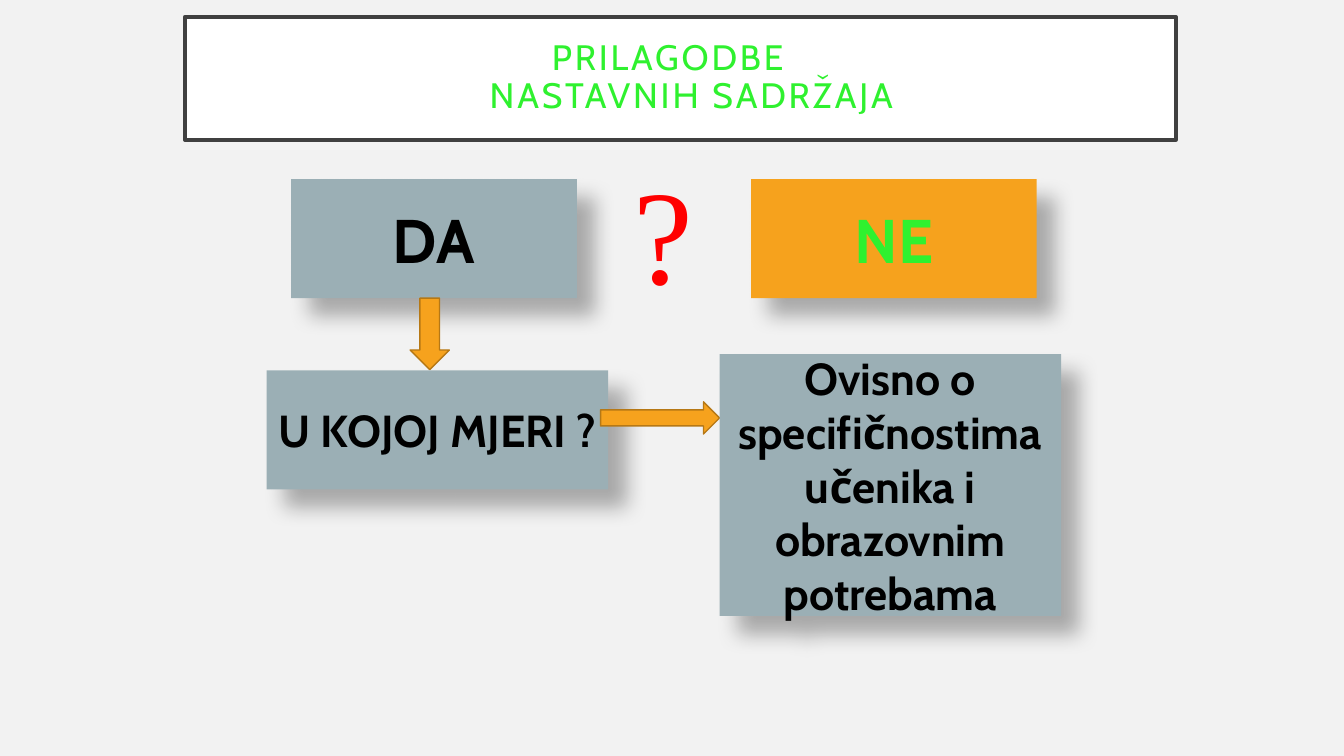
from lxml.etree import SubElement as Sub
from pptx import Presentation
from pptx.dml.color import RGBColor
from pptx.enum.shapes import MSO_SHAPE as Kind
from pptx.enum.text import MSO_ANCHOR as Anchor, MSO_AUTO_SIZE as Fit, PP_ALIGN as Align
from pptx.oxml.ns import qn
from pptx.util import Pt

GREY, GOLD, GREEN, BLACK = "9BAFB5", "F6A21D", "2FF12F", "000000"


def paint(fill, hue):
    fill.solid()
    fill.fore_color.rgb = RGBColor.from_string(hue)


def apply(item, form):
    """Set each attribute of item from the dict form."""
    for name, value in form.items():
        setattr(item, name, value)


class Board:
    font = "Cabin"
    frame = dict(word_wrap=True, auto_size=Fit.NONE, vertical_anchor=Anchor.MIDDLE)

    def __init__(self, deck):
        self.slide = deck.slides.add_slide(deck.slide_layouts[5])
        paint(self.slide.background.fill, "F2F2F2")

    def fill_in(self, shape, text, size, hue, align=Align.CENTER, **form):
        """Put styled text in the shape and return its paragraph."""
        apply(shape.text_frame, self.frame)
        par = shape.text_frame.paragraphs[0]
        par.text, par.alignment = text, align
        for run in par.runs:
            apply(run.font, dict(name=self.font, size=Pt(size)) | form)
            paint(run.font.fill, hue)
        return par

    def edge(self, shape, hue, width):
        paint(shape.line.fill, hue)
        shape.line.width = Pt(width)

    def title(self, text, spot):
        shape = self.slide.shapes.title
        apply(shape, dict(zip(("left", "top", "width", "height"), map(Pt, spot))))
        paint(shape.fill, "FFFFFF")
        self.edge(shape, "404040", 2.5)
        par = self.fill_in(shape, text, 25.2, GREEN)
        par.line_spacing = 0.9
        sides = dict.fromkeys(("margin_left", "margin_top", "margin_bottom"), Pt(14.4))
        apply(shape.text_frame, sides | dict(margin_right=Pt(30.4)))
        # The hanging indent sets the second line to the right of the first.
        props = par._p.get_or_add_pPr()
        props.set("marL", str(Pt(32)))
        props.set("indent", str(-Pt(32)))
        for run in par.runs:
            run._r.get_or_add_rPr().set("spc", "200")

    def shape(self, kind, spot, hue):
        shape = self.slide.shapes.add_shape(kind, *map(Pt, spot))
        shape.shadow.inherit = False
        paint(shape.fill, hue)
        return shape

    def box(self, text, spot, size, fill=GREY, hue=BLACK):
        shape = self.shape(Kind.RECTANGLE, spot, fill)
        shape.line.fill.background()
        self.shade(shape)
        self.fill_in(shape, text, size, hue, bold=True)

    def shade(self, shape):
        """Cast a soft shadow down and to the right."""
        fx = shape._element.spPr.find(qn("a:effectLst"))
        cast = Sub(fx, qn("a:outerShdw"), blurRad=str(Pt(15)), dist=str(Pt(18)),
                   dir="2700000", algn="tl", rotWithShape="0")
        tint = Sub(cast, qn("a:srgbClr"), val=BLACK)
        Sub(tint, qn("a:alpha"), val="30000")

    def arrow(self, kind, spot):
        self.edge(self.shape(kind, spot, GOLD), "B67815", 1)

    def label(self, text, spot, size, hue, font):
        shape = self.slide.shapes.add_textbox(*map(Pt, spot))
        self.fill_in(shape, text, size, hue, Align.LEFT, name=font)


def main():
    deck = Presentation()
    apply(deck, dict(slide_width=Pt(960), slide_height=Pt(540)))
    board = Board(deck)
    board.title("PRILAGODBE\vNASTAVNIH SADRŽAJA", (132, 12, 708, 88))
    board.box("DA", (208, 128, 204, 85), 44)
    board.box("NE", (536.5, 128, 204, 85), 44, GOLD, GREEN)
    board.arrow(Kind.DOWN_ARROW, (293, 213, 28, 51))
    board.box("U KOJOJ MJERI ?", (190.5, 264.5, 244, 85), 32)
    board.arrow(Kind.RIGHT_ARROW, (429, 287, 85, 23))
    board.box("Ovisno o specifičnostima učenika i obrazovnim potrebama",
              (514, 253, 244, 187), 32)
    board.label("?", (445.5, 128, 57, 73.5), 96, "FF0000", "Times New Roman")
    deck.save("out.pptx")


if __name__ == "__main__":
    main()
